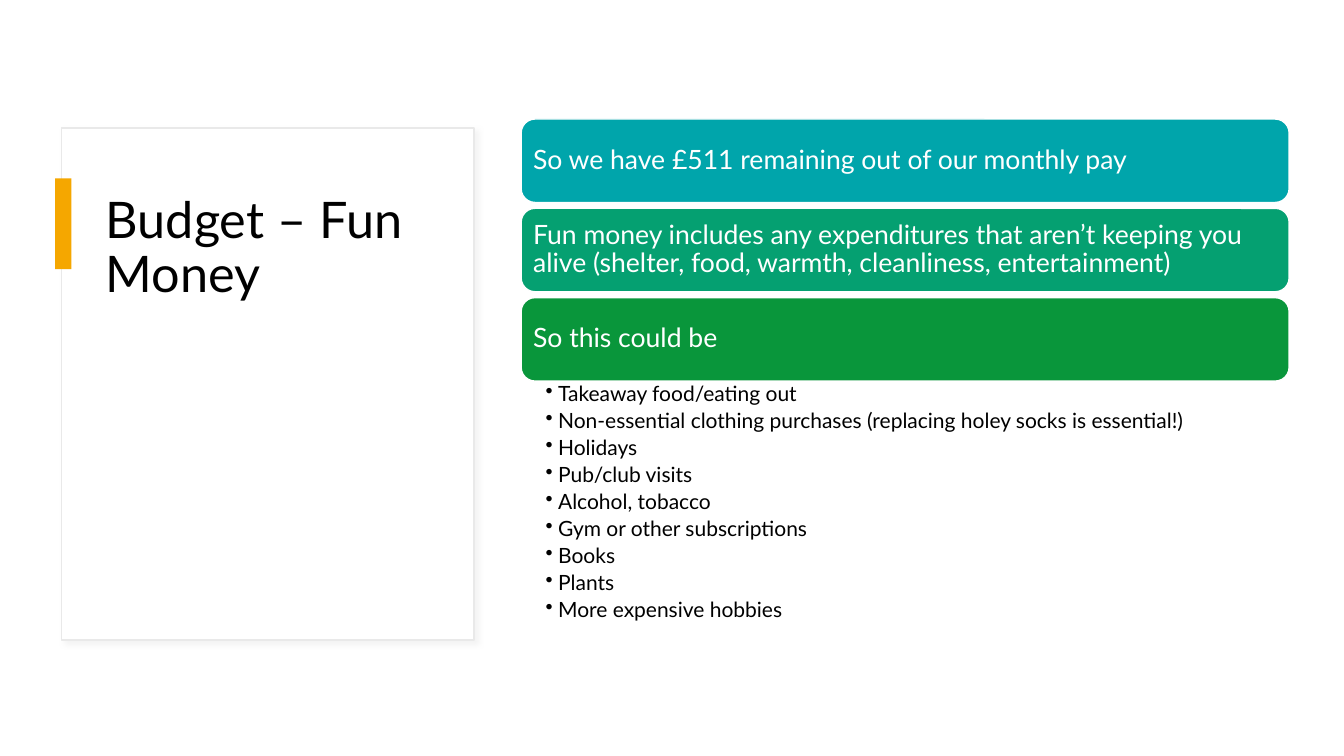
import pptx
import pptx.dml.color
import pptx.enum.shapes
import pptx.enum.text
import pptx.oxml
import pptx.oxml.ns
import pptx.util
from lxml import etree

Pt = pptx.util.Pt
RGBColor = pptx.dml.color.RGBColor
MSO_SHAPE = pptx.enum.shapes.MSO_SHAPE
MSO_ANCHOR = pptx.enum.text.MSO_ANCHOR
PP_ALIGN = pptx.enum.text.PP_ALIGN
qn = pptx.oxml.ns.qn

FONT = "Lato"
WHITE = RGBColor(0xFF, 0xFF, 0xFF)
BLACK = RGBColor(0, 0, 0)
BORDER = RGBColor(0xE9, 0xE9, 0xE9)
ORANGE = RGBColor(0xF5, 0xA7, 0x00)
TEAL = RGBColor(0x00, 0xA5, 0xAB)
SEA_GREEN = RGBColor(0x05, 0xA0, 0x71)
GREEN = RGBColor(0x09, 0x96, 0x3B)

BANNERS = [
    ("So we have £511 remaining out of our monthly pay", TEAL),
    ("Fun money includes any expenditures that aren’t keeping you alive "
     "(shelter, food, warmth, cleanliness, entertainment)", SEA_GREEN),
    ("So this could be", GREEN),
]
EXAMPLES = [
    "Takeaway food/eating out",
    "Non-essential clothing purchases (replacing holey socks is essential!)",
    "Holidays",
    "Pub/club visits",
    "Alcohol, tobacco",
    "Gym or other subscriptions",
    "Books",
    "Plants",
    "More expensive hobbies",
]
SHADOW = (
    '<a:effectLst xmlns:a="http://schemas.openxmlformats.org/drawingml/2006/main">'
    '<a:outerShdw blurRad="50800" dist="38100" dir="2700000" algn="tl">'
    '<a:srgbClr val="D9D9D9"><a:alpha val="30000"/></a:srgbClr>'
    '</a:outerShdw></a:effectLst>'
)


def add_box(s, kind, x, y, w, h, fill, line=None):
    sp = s.shapes.add_shape(kind, Pt(x), Pt(y), Pt(w), Pt(h))
    sp.shadow.inherit = False
    sp.fill.solid()
    sp.fill.fore_color.rgb = fill
    if line is None:
        sp.line.fill.background()
    else:
        sp.line.color.rgb = line
        sp.line.width = Pt(1)
    return sp


def write_text(sp, lines, size, color, insets, anchor=MSO_ANCHOR.TOP):
    """Fill a shape with paragraphs; insets are left, top, right, bottom."""
    tf = sp.text_frame
    tf.word_wrap = True
    tf.vertical_anchor = anchor
    tf.margin_left, tf.margin_top, tf.margin_right, tf.margin_bottom = map(Pt, insets)
    tf.text = "\n".join(lines)
    for p in tf.paragraphs:
        p.alignment = PP_ALIGN.LEFT
        p.line_spacing = 0.9
        p.font.name = FONT
        p.font.size = Pt(size)
        p.font.color.rgb = color
    return tf


def add_title_card(s, x, y, w, h):
    card = add_box(s, MSO_SHAPE.RECTANGLE, x, y, w, h, WHITE, BORDER)
    props = card.fill._xPr
    props.replace(props.find(qn("a:effectLst")), pptx.oxml.parse_xml(SHADOW))
    title = s.shapes.add_textbox(Pt(x + 24.5), Pt(y + 44), Pt(w - 50), Pt(h - 88))
    write_text(title, ["Budget – Fun Money"], 36, BLACK, (7.2, 3.6, 7.2, 3.6))
    add_box(s, MSO_SHAPE.RECTANGLE, x - 4.5, y + 36, 11.5, 64.8, ORANGE)


def add_bullets(s, lines, x, y, w, h):
    sp = s.shapes.add_textbox(Pt(x), Pt(y), Pt(w), Pt(h))
    tf = write_text(sp, lines, 15, BLACK, (17.4, 1.9, 10.8, 1.9))
    for p in tf.paragraphs:
        p.space_after = Pt(3)
        pPr = p._p.get_or_add_pPr()
        pPr.set("marL", str(Pt(9)))
        pPr.set("indent", str(-Pt(9)))
        bullet = etree.Element(qn("a:buChar"), char="•")
        pPr.find(qn("a:defRPr")).addprevious(bullet)


def add_fun_money(s, x, y, w, h):
    """Stack the banners from the top and list the examples below them."""
    banner_h, pitch = 59.6, 63.8
    for i, (text, color) in enumerate(BANNERS):
        sp = add_box(s, MSO_SHAPE.ROUNDED_RECTANGLE, x, y + i * pitch, w, banner_h, color, WHITE)
        write_text(sp, [text], 19, WHITE, (5.7,) * 4, MSO_ANCHOR.MIDDLE)
    used = (len(BANNERS) - 1) * pitch + banner_h
    add_bullets(s, EXAMPLES, x, y + used, w, h - used)


def main():
    prs = pptx.Presentation()
    prs.slide_width, prs.slide_height = Pt(960), Pt(540)
    s = prs.slides.add_slide(prs.slide_layouts[6])
    add_title_card(s, 44, 91.5, 294.5, 365.75)
    add_fun_money(s, 372.25, 85, 548.6, 370)
    prs.save("out.pptx")


if __name__ == "__main__":
    main()
